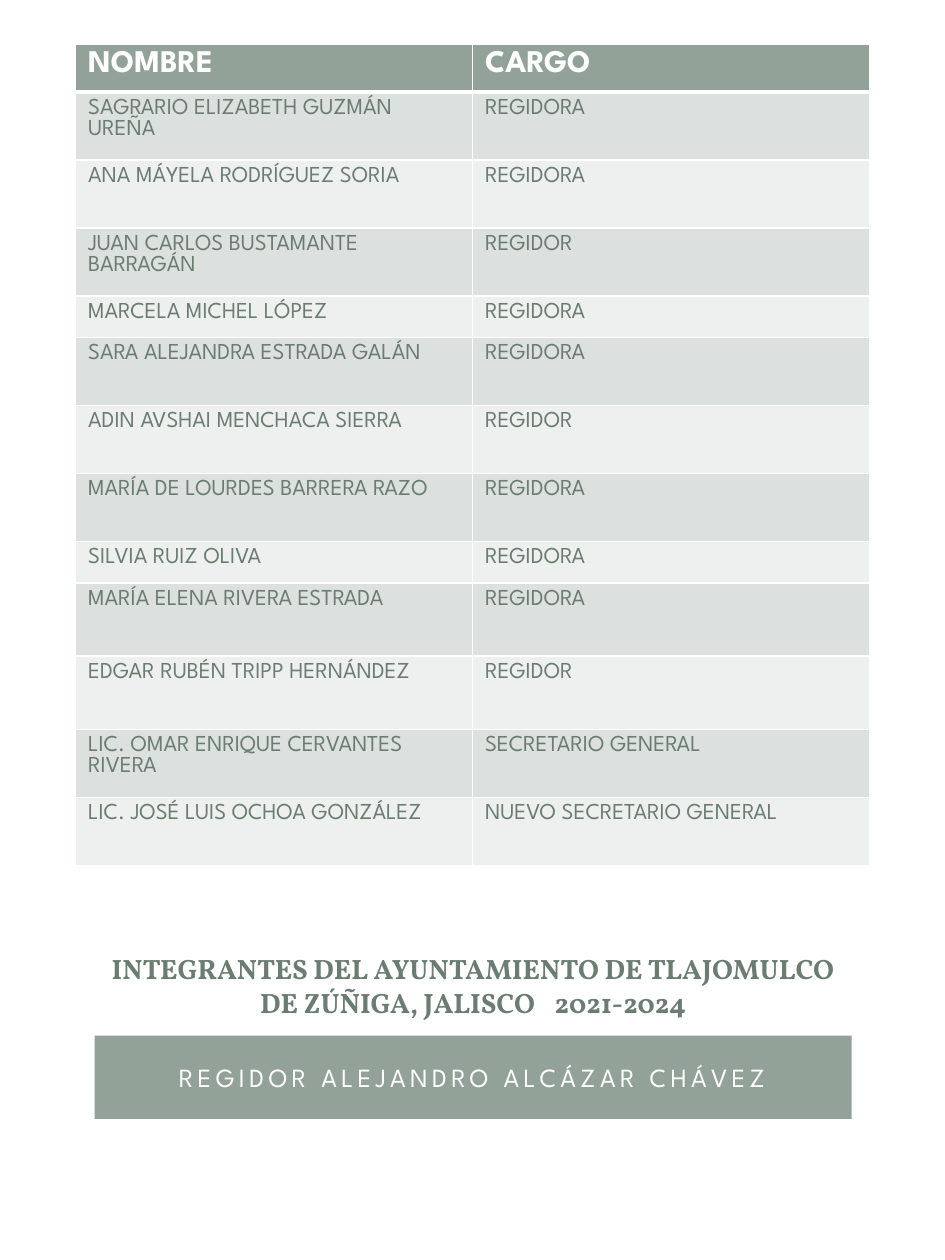
from lxml.etree import SubElement
from pptx import Presentation
from pptx.dml.color import RGBColor
from pptx.enum.shapes import MSO_SHAPE
from pptx.enum.text import MSO_ANCHOR, PP_ALIGN
from pptx.oxml.ns import qn
from pptx.util import Inches, Pt

WHITE = RGBColor(0xFF, 0xFF, 0xFF)
SAGE = RGBColor(0x93, 0xA2, 0x99)
MOSS = RGBColor(0x6B, 0x7D, 0x72)
BANDS = (RGBColor(0xDC, 0xE0, 0xDE), RGBColor(0xEE, 0xF0, 0xEF))
SANS, SERIF = "League Spartan", "Vollkorn"

HEAD, SHORT, MID, TALL = 0.38, 0.33, 0.54, 0.58
ROWS = [
    ("NOMBRE", "CARGO", HEAD),
    ("SAGRARIO ELIZABETH GUZMÁN UREÑA", "REGIDORA", MID),
    ("ANA MÁYELA RODRÍGUEZ SORIA", "REGIDORA", MID),
    ("JUAN CARLOS BUSTAMANTE BARRAGÁN", "REGIDOR", MID),
    ("MARCELA MICHEL LÓPEZ", "REGIDORA", SHORT),
    ("SARA ALEJANDRA ESTRADA GALÁN", "REGIDORA", MID),
    ("ADIN AVSHAI MENCHACA SIERRA", "REGIDOR", MID),
    ("MARÍA DE LOURDES BARRERA RAZO", "REGIDORA", MID),
    ("SILVIA RUIZ OLIVA", "REGIDORA", SHORT),
    ("MARÍA ELENA RIVERA ESTRADA", "REGIDORA", TALL),
    ("EDGAR RUBÉN TRIPP HERNÁNDEZ", "REGIDOR", TALL),
    ("LIC. OMAR ENRIQUE CERVANTES RIVERA", "SECRETARIO GENERAL", MID),
    ("LIC. JOSÉ LUIS OCHOA GONZÁLEZ", "NUEVO SECRETARIO GENERAL", MID),
]
TITLE = ("INTEGRANTES DEL AYUNTAMIENTO DE TLAJOMULCO DE ZÚÑIGA, JALISCO",
         " ", "2021-2024")


def style(run, face, size, color, bold=False, gap=0):
    """Format a run; gap is the letter spacing in points."""
    font = run.font
    font.name, font.size, font.bold = face, Pt(size), bold
    font.color.rgb = color
    if gap:
        run.font._element.set("spc", str(int(gap * 100)))


def place(shape, left, top, width, height):
    shape.left, shape.top = Inches(left), Inches(top)
    shape.width, shape.height = Inches(width), Inches(height)


def center(frame):
    frame.word_wrap = True
    frame.vertical_anchor = MSO_ANCHOR.MIDDLE
    frame.paragraphs[0].alignment = PP_ALIGN.CENTER


def edge(cell, widths):
    """Draw white borders; widths maps a side letter to points."""
    props = cell._tc.get_or_add_tcPr()
    for side, width in widths.items():
        line = SubElement(props, qn(f"a:ln{side}"), w=str(Pt(width)))
        fill = SubElement(line, qn("a:solidFill"))
        SubElement(fill, qn("a:srgbClr"), val=str(WHITE))


def fill_cell(cell, text, row):
    head = row == 0
    edge(cell, {"L": 1, "R": 1, "T": 3 if row == 1 else 1,
                "B": 3 if head else 1})
    cell.fill.solid()
    cell.fill.fore_color.rgb = SAGE if head else BANDS[(row - 1) % 2]
    cell.text_frame.text = text
    run = cell.text_frame.paragraphs[0].runs[0]
    style(run, SANS, 18 if head else 13, WHITE if head else MOSS, head)


def add_list(slide):
    total = sum(row[-1] for row in ROWS)
    table = slide.shapes.add_table(
        len(ROWS), 2, Inches(0.6), Inches(0.35), Inches(6.3), Inches(total)
    ).table
    for row, (name, post, height) in enumerate(ROWS):
        table.rows[row].height = Inches(height)
        for col, text in enumerate((name, post)):
            fill_cell(table.cell(row, col), text, row)


def set_title(title):
    place(title, 0.75, 7.44, 6.01, 0.76)
    center(title.text_frame)
    para = title.text_frame.paragraphs[0]
    for text in TITLE:
        run = para.add_run()
        run.text = text
        style(run, SERIF, 16, MOSS, True, 8 if text == " " else 0)


def set_body(body):
    place(body, 0.78, 8.25, 5.94, 0.59)
    body.text_frame.text = "REGIDOR ALEJANDRO ALCÁZAR CHÁVEZ"
    center(body.text_frame)
    style(body.text_frame.paragraphs[0].runs[0], SANS, 15, WHITE, gap=2.5)


def add_bar(slide):
    """Put the sage bar behind the placeholders."""
    bar = slide.shapes.add_shape(MSO_SHAPE.RECTANGLE, 0, 0, 0, 0)
    place(bar, 0.75, 8.22, 6.01, 0.66)
    bar.shadow.inherit = False
    bar.fill.solid()
    bar.fill.fore_color.rgb = SAGE
    bar.line.fill.background()
    slide.shapes.title.element.addprevious(bar.element)


def main():
    deck = Presentation()
    deck.slide_width, deck.slide_height = Inches(7.5), Inches(10)
    slide = deck.slides.add_slide(deck.slide_layouts.get_by_name("Section Header"))
    set_title(slide.shapes.title)
    set_body(slide.placeholders[1])
    add_bar(slide)
    add_list(slide)
    deck.save("out.pptx")


if __name__ == "__main__":
    main()
